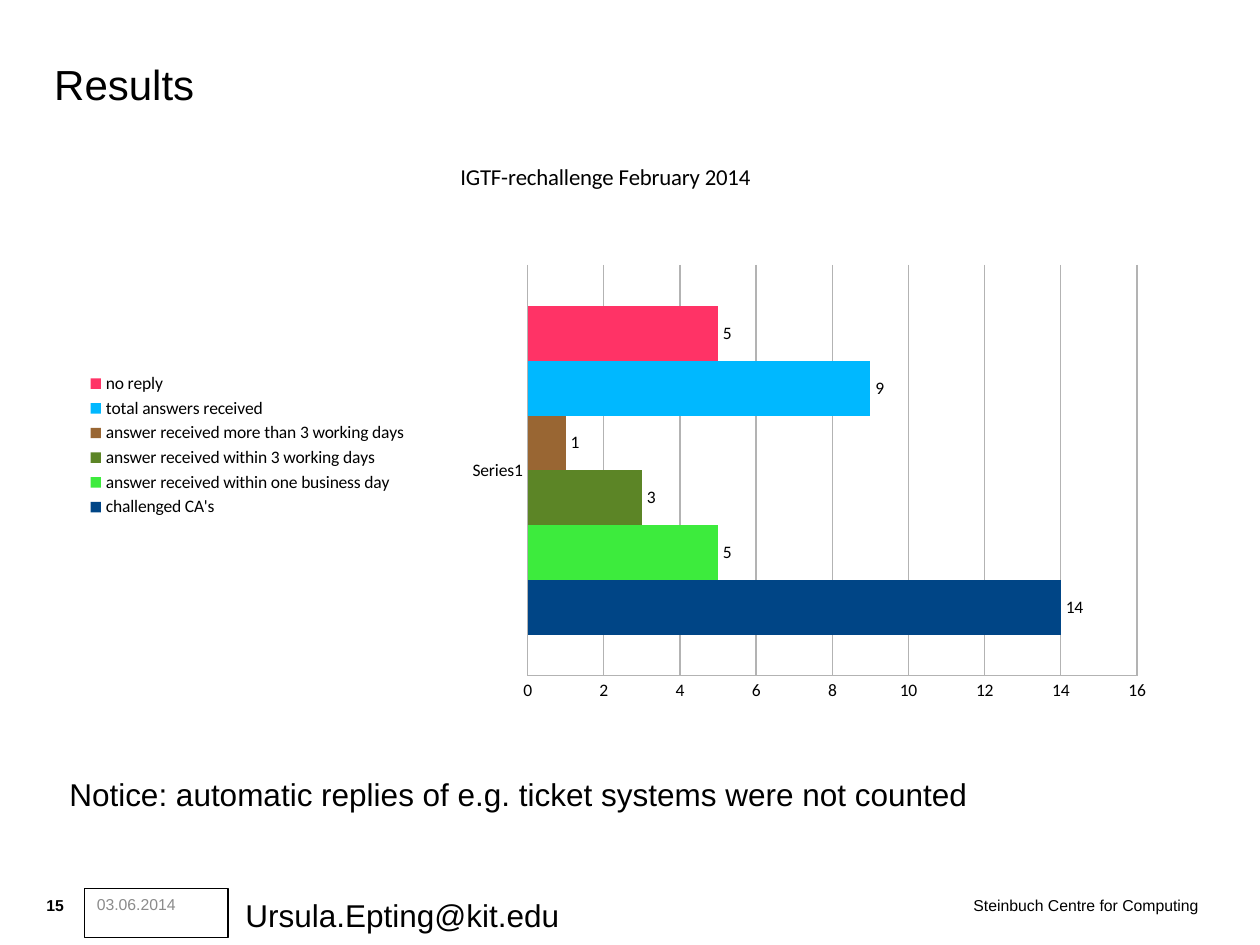
from dataclasses import dataclass

from lxml import etree
from pptx import Presentation
from pptx.chart.data import CategoryChartData
from pptx.dml.color import RGBColor
from pptx.enum import chart as ch, shapes, text
from pptx.oxml import ns
from pptx.util import Inches, Pt


@dataclass(frozen=True)
class Theme:
    font: str = "Arial"
    chart_font: str = "Calibri"
    ink: str = "000000"
    muted: str = "8B8B8B"
    rule: str = "B3B3B3"
    title: float = 24
    body: float = 18
    chart_title: float = 13
    chart_text: float = 10
    footer: float = 9
    hairline: float = 0.75


THEME = Theme()
RESULTS = [
    ("challenged CA's", 14, "004586"),
    ("answer received within one business day", 5, "3DEB3D"),
    ("answer received within 3 working days", 3, "5C8526"),
    ("answer received more than 3 working days", 1, "996633"),
    ("total answers received", 9, "00B8FF"),
    ("no reply", 5, "FF3366"),
]


def rgb(color):
    return RGBColor.from_string(color)


def style_font(font, size, color=THEME.ink, name=THEME.font, bold=False):
    font.name, font.size, font.bold = name, Pt(size), bold
    font.color.rgb = rgb(color)


def style_line(line, color=THEME.rule):
    line.color.rgb = rgb(color)
    line.width = Pt(THEME.hairline)


def place(shape, box):
    shape.left, shape.top, shape.width, shape.height = map(Inches, box)


def write(frame, words, size, color=THEME.ink, bold=False,
          align=text.PP_ALIGN.LEFT, anchor=text.MSO_ANCHOR.TOP):
    frame.text = words
    frame.word_wrap = True
    frame.auto_size = text.MSO_AUTO_SIZE.NONE
    frame.vertical_anchor = anchor
    paragraph = frame.paragraphs[0]
    paragraph.alignment = align
    paragraph.space_before = Pt(0)
    style_font(paragraph.runs[0].font, size, color, bold=bold)
    return paragraph


def clear_margins(frame, top=0):
    frame.margin_left = frame.margin_right = frame.margin_bottom = 0
    frame.margin_top = Inches(top)


def add_title(slide, box):
    title = slide.shapes.title
    place(title, box)
    write(title.text_frame, "Results", THEME.title, anchor=text.MSO_ANCHOR.MIDDLE)
    clear_margins(title.text_frame)


def add_notice(slide, box):
    notice = slide.placeholders[1]
    place(notice, box)
    paragraph = write(
        notice.text_frame,
        "Notice: automatic replies of e.g. ticket systems were not counted",
        THEME.body)
    clear_margins(notice.text_frame, top=0.6)
    properties = paragraph._p.get_or_add_pPr()
    properties.set("marL", str(Inches(0.47)))
    properties.set("indent", str(Inches(-0.35)))
    etree.SubElement(properties, ns.qn("a:buNone"))


def set_layout(element, index, **fractions):
    for old in element.findall(ns.qn("c:layout")):
        element.remove(old)
    layout = etree.Element(ns.qn("c:layout"))
    manual = etree.SubElement(layout, ns.qn("c:manualLayout"))
    settings = {"xMode": "edge", "yMode": "edge", **fractions}
    for tag, value in settings.items():
        etree.SubElement(manual, ns.qn(f"c:{tag}")).set("val", str(value))
    element.insert(index, layout)


def add_results_chart(slide, box):
    data = CategoryChartData()
    data.categories = ["Series1"]
    for name, count, _ in RESULTS:
        data.add_series(name, [count])
    chart = slide.shapes.add_chart(
        ch.XL_CHART_TYPE.BAR_CLUSTERED, *map(Inches, box), data).chart
    style_font(chart.font, THEME.chart_text, name=THEME.chart_font)

    chart.has_title = True
    heading = chart.chart_title
    heading.text_frame.text = "IGTF-rechallenge February 2014"
    style_font(heading.text_frame.paragraphs[0].runs[0].font,
               THEME.chart_title, name=THEME.chart_font)
    set_layout(heading.element, 1, x=0.35, y=0.016)
    set_layout(chart.element.find(".//" + ns.qn("c:plotArea")), 0,
               x=0.365, y=0.196, w=0.617, h=0.734)

    chart.has_legend = True
    chart.legend.position = ch.XL_LEGEND_POSITION.LEFT
    chart.legend.include_in_layout = False
    style_font(chart.legend.font, THEME.chart_text, name=THEME.chart_font)

    for axis in (chart.category_axis, chart.value_axis):
        axis.major_tick_mark = axis.minor_tick_mark = ch.XL_TICK_MARK.NONE
        style_line(axis.format.line)
        style_font(axis.tick_labels.font, THEME.chart_text, name=THEME.chart_font)
    counts = chart.value_axis
    counts.minimum_scale, counts.maximum_scale, counts.major_unit = 0, 16, 2
    counts.has_major_gridlines = True
    style_line(counts.major_gridlines.format.line)

    plot = chart.plots[0]
    plot.gap_width, plot.overlap = 150, 0
    plot.vary_by_categories = False
    for series, (_, _, color) in zip(plot.series, RESULTS):
        series.format.fill.solid()
        series.format.fill.fore_color.rgb = rgb(color)
        labels = series.data_labels
        labels.show_value = True
        labels.position = ch.XL_LABEL_POSITION.OUTSIDE_END
        style_font(labels.font, THEME.chart_text, name=THEME.chart_font)


def add_outline_text(slide, box, words, **style):
    left, top, width, height = map(Inches, box)
    right, bottom = left + width, top + height
    builder = slide.shapes.build_freeform(left, top)
    builder.add_line_segments([(right, top), (right, bottom), (left, bottom)])
    outline = builder.convert_to_shape()
    outline.shadow.inherit = False
    outline.fill.background()
    outline.line.fill.background()
    write(outline.text_frame, words, THEME.footer, **style)


def add_footer(slide, left, top, height):
    add_outline_text(slide, (left, top, 0.36, 0.24), "15", bold=True)
    add_outline_text(slide, (left + 6.35, top, 2.99, height),
                     "Steinbuch Centre for Computing", align=text.PP_ALIGN.RIGHT)

    contact = slide.shapes.add_textbox(
        *map(Inches, (left + 1.58, top, 4.57, height)))
    write(contact.text_frame, "Ursula.Epting@kit.edu", THEME.body)

    date = slide.shapes.add_shape(
        shapes.MSO_SHAPE.RECTANGLE,
        *map(Inches, (left + 0.4, top - 0.01, 1.14, height)))
    date.shadow.inherit = False
    date.fill.background()
    style_line(date.line, THEME.ink)
    write(date.text_frame, "03.06.2014", THEME.footer, color=THEME.muted)


def main():
    deck = Presentation()
    deck.slide_width, deck.slide_height = Inches(10), Inches(7.5)
    slide = deck.slides.add_slide(deck.slide_layouts[1])
    add_footer(slide, left=0.27, top=7.06, height=0.39)
    add_title(slide, (0.43, 0.36, 7.56, 0.61))
    add_notice(slide, (0.43, 5.55, 9.02, 1.42))
    add_results_chart(slide, (0.59, 1.18, 8.66, 4.71))
    deck.save("out.pptx")


if __name__ == "__main__":
    main()
